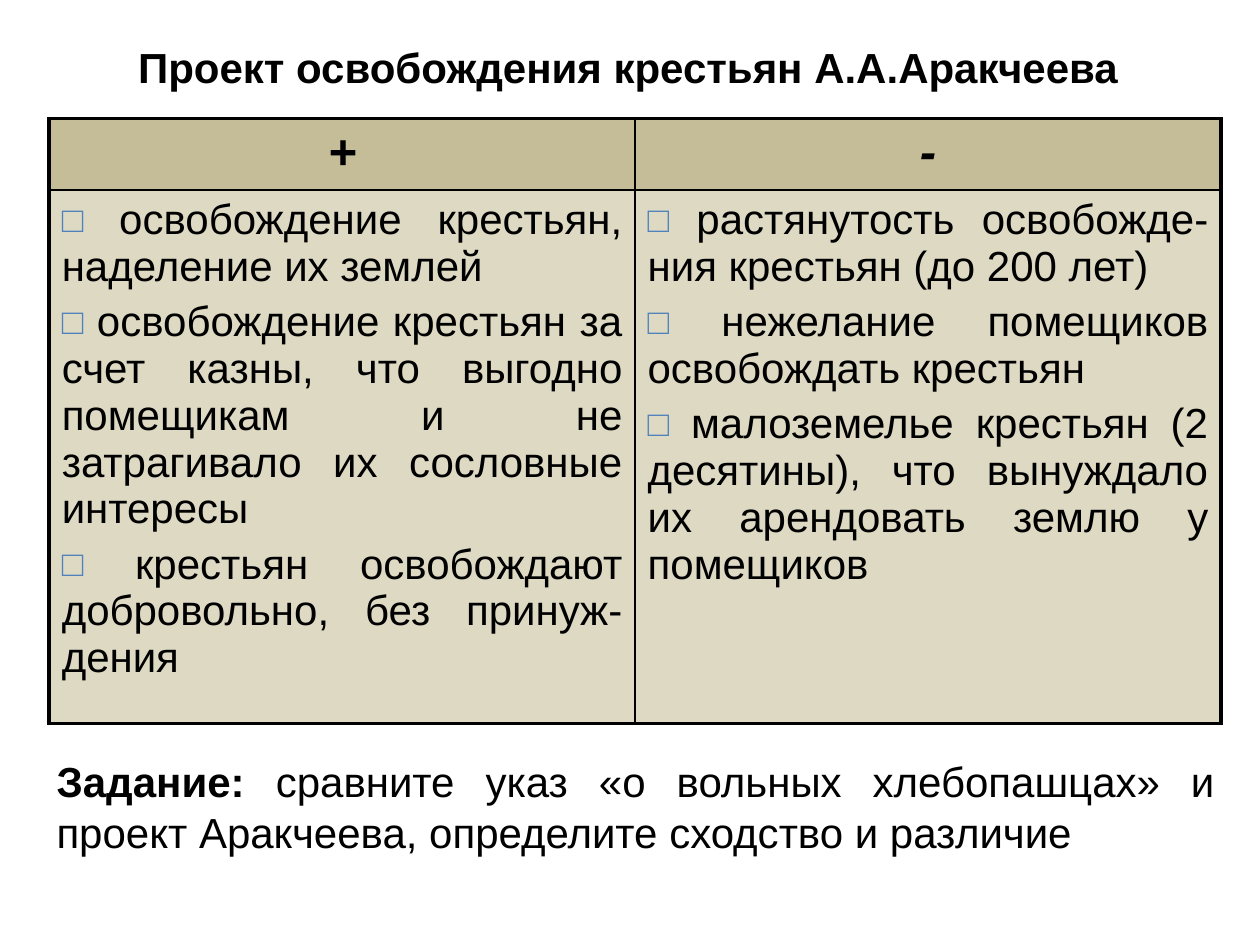
import pptx
import pptx.dml.color
import pptx.enum.text
import pptx.oxml
import pptx.oxml.ns
import pptx.util
from pptx.util import Inches

ALIGN = pptx.enum.text.PP_ALIGN
ANCHOR = pptx.enum.text.MSO_ANCHOR
INK, ACCENT = "000000", "4F81BD"
HEAD_FILL, BODY_FILL = "C4BD97", "DDD9C3"
OUTER, INNER = 2.25, 1

TITLE = "Проект освобождения крестьян А.А.Аракчеева"
COLUMNS = [
    ("+", [
        "освобождение крестьян, наделение их землей",
        "освобождение крестьян за счет казны, что выгодно помещикам "
        "и не затрагивало их сословные интересы",
        "крестьян освобождают добровольно, без принуж-дения",
    ]),
    ("-", [
        "растянутость освобожде-ния крестьян (до 200 лет)",
        "нежелание помещиков освобождать крестьян",
        "малоземелье крестьян (2 десятины), что вынуждало их "
        "арендовать землю у помещиков",
    ]),
]
TASK = ["Задание: ", "сравните указ «о вольных хлебопашцах» и проект "
        "Аракчеева, определите сходство и различие"]


def rgb(value):
    return pptx.dml.color.RGBColor.from_string(value)


def style(r, size=24, bold=False, italic=False):
    r.font.name = "Arial"
    r.font.size = pptx.util.Pt(size)
    r.font.bold = bold
    r.font.italic = italic
    r.font.color.rgb = rgb(INK)


def add_xml(parent, xml):
    head, tail = xml.split(" ", 1)
    ns = pptx.oxml.ns.nsdecls("a")
    parent.append(pptx.oxml.parse_xml(f"{head} {ns} {tail}"))


def add_bullet(p):
    pPr = p._p.get_or_add_pPr()
    pPr.set("marL", "0")
    pPr.set("indent", "0")
    add_xml(pPr, f'<a:buClr ><a:srgbClr val="{ACCENT}"/></a:buClr>')
    add_xml(pPr, '<a:buSzPct val="85000"/>')
    add_xml(pPr, '<a:buFont typeface="Arial"/>')
    add_xml(pPr, '<a:buChar char="□"/>')


def format_cell(cell, row, col, fill):
    widths = {
        "L": OUTER if col == 0 else INNER,
        "R": OUTER if col == len(COLUMNS) - 1 else INNER,
        "T": OUTER if row == 0 else INNER,
        "B": OUTER if row == 1 else INNER,
    }
    tcPr = cell._tc.get_or_add_tcPr()
    for side, width in widths.items():
        add_xml(tcPr, f'<a:ln{side} w="{int(width * 12700)}"><a:solidFill>'
                      f'<a:srgbClr val="{INK}"/></a:solidFill></a:ln{side}>')
    cell.fill.solid()
    cell.fill.fore_color.rgb = rgb(fill)


def place_title(s, left, top, width, height):
    sp = s.shapes.title
    sp.left, sp.top, sp.width, sp.height = left, top, width, height
    tf = sp.text_frame
    tf.text = TITLE
    tf.word_wrap = True
    tf.vertical_anchor = ANCHOR.TOP
    p = tf.paragraphs[0]
    p.alignment = ALIGN.CENTER
    style(p.runs[0], bold=True)


def place_table(s, left, top, width, height):
    table = s.shapes.add_table(2, len(COLUMNS), left, top, width, height).table
    table.rows[0].height = Inches(0.57)
    table.rows[1].height = height - Inches(0.57)
    for col, (sign, points) in enumerate(COLUMNS):
        head, body = table.cell(0, col), table.cell(1, col)
        format_cell(head, 0, col, HEAD_FILL)
        format_cell(body, 1, col, BODY_FILL)
        head.text_frame.text = sign
        p = head.text_frame.paragraphs[0]
        p.alignment = ALIGN.CENTER
        style(p.runs[0], size=28, bold=True, italic=True)
        body.text_frame.text = "\n".join(" " + point for point in points)
        for i, p in enumerate(body.text_frame.paragraphs):
            add_bullet(p)
            p.alignment = ALIGN.JUSTIFY
            if i:
                p.space_before = pptx.util.Pt(4.8)
            style(p.runs[0])


def place_task(s, left, top, width, height):
    tf = s.shapes.add_textbox(left, top, width, height).text_frame
    tf.word_wrap = True
    p = tf.paragraphs[0]
    p.alignment = ALIGN.JUSTIFY
    for i, text in enumerate(TASK):
        r = p.add_run()
        r.text = text
        style(r, bold=i == 0)


def main():
    prs = pptx.Presentation()
    prs.slide_width, prs.slide_height = Inches(10), Inches(7.5)
    s = prs.slides.add_slide(prs.slide_layouts[5])
    s.background.fill.solid()
    s.background.fill.fore_color.rgb = rgb("FFFFFF")
    place_title(s, Inches(0.62), Inches(0.28), Inches(8.73), Inches(0.5))
    place_table(s, Inches(0.39), Inches(0.94), Inches(9.3), Inches(4.8))
    place_task(s, Inches(0.35), Inches(5.95), Inches(9.39), Inches(0.91))
    prs.save("out.pptx")


if __name__ == "__main__":
    main()
